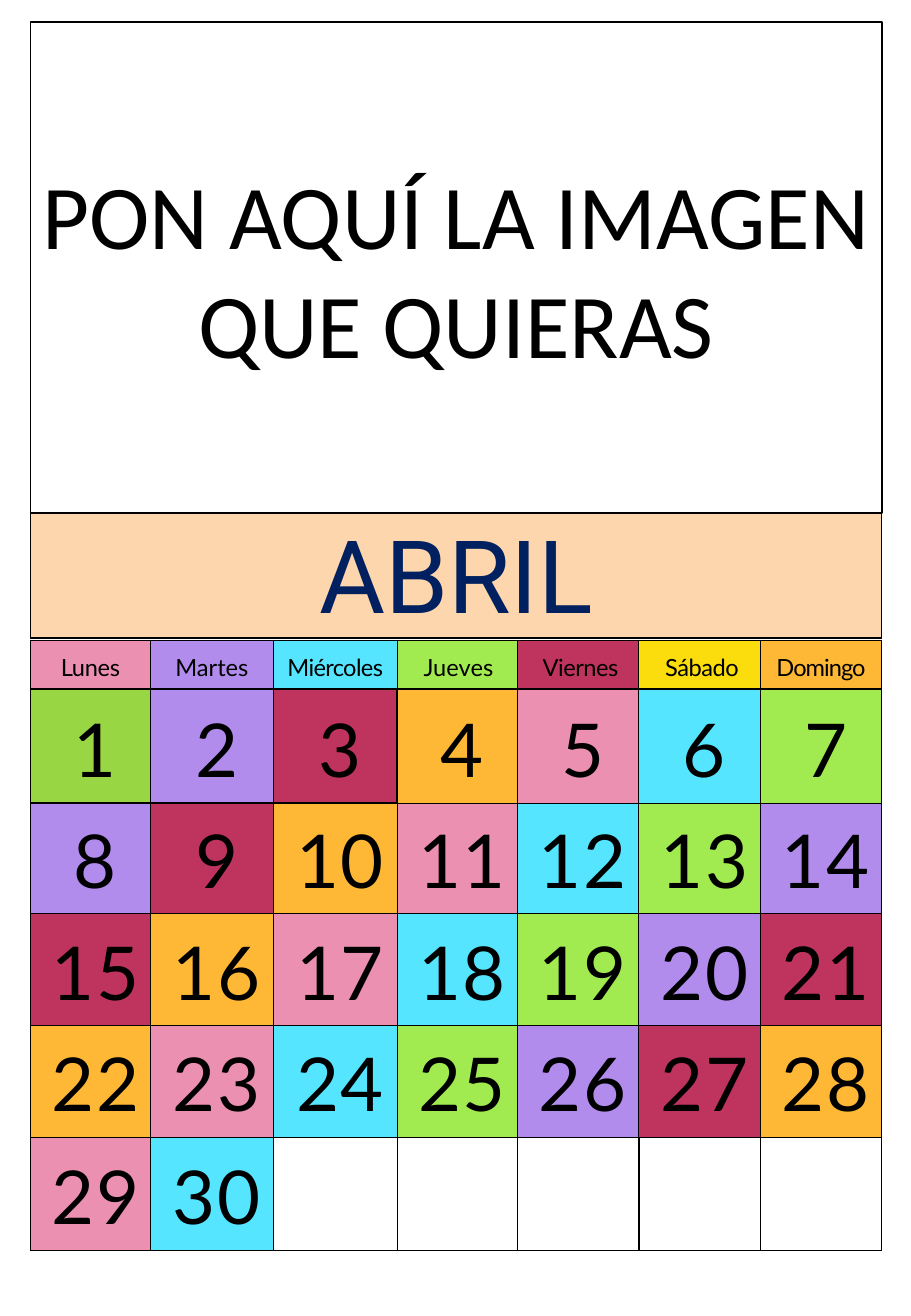
from lxml import etree
from pptx import Presentation
from pptx.dml.color import RGBColor
from pptx.enum.shapes import MSO_SHAPE
from pptx.enum.text import MSO_ANCHOR, PP_ALIGN
from pptx.oxml.ns import qn
from pptx.util import Pt

EMU_PER_PX = 9144
RECTANGLE = MSO_SHAPE.RECTANGLE
MIDDLE = MSO_ANCHOR.MIDDLE
CENTER = PP_ALIGN.CENTER

BLACK = RGBColor(0x00, 0x00, 0x00)
WHITE = RGBColor(0xFF, 0xFF, 0xFF)
NAVY = RGBColor(0x00, 0x20, 0x60)
PEACH = RGBColor(0xFD, 0xD6, 0xAD)
PINK = RGBColor(0xEB, 0x90, 0xB0)
VIOLET = RGBColor(0xB1, 0x8C, 0xEC)
CYAN = RGBColor(0x55, 0xE5, 0xFF)
LIME = RGBColor(0xA1, 0xEB, 0x51)
GREEN = RGBColor(0x99, 0xD6, 0x43)
CRIMSON = RGBColor(0xBE, 0x34, 0x5E)
YELLOW = RGBColor(0xFB, 0xDD, 0x0D)
ORANGE = RGBColor(0xFF, 0xB8, 0x36)

LEFT, WIDTH = 25, 701
COLUMN_WIDTHS = [99, 101, 102, 99, 100, 100, 100]
ROW_HEIGHTS = [40, 94, 91, 92, 92, 93]
ROW_INSETS = [5, 4, 2, 3, 3, 3]
DAY_COLORS = [LIME, VIOLET, CRIMSON, ORANGE, PINK, CYAN]
DAYS_IN_MONTH = 30
WEEKDAYS = [
    ("Lunes", PINK, 0, -20),
    ("Martes", VIOLET, 0, 0),
    ("Miércoles", CYAN, 0, -40),
    ("Jueves", LIME, 2, 0),
    ("Viernes", CRIMSON, 4, -30),
    ("Sábado", YELLOW, 4, -30),
    ("Domingo", ORANGE, 0, -60),
]
THIN, THICK = 0.75, 1
THICK_CELLS = {(1, 0), (1, 1), (1, 2), (5, 5), (5, 6)}
NEIGHBOURS = {"lnL": (0, -1), "lnR": (0, 1), "lnT": (-1, 0), "lnB": (1, 0)}


def px(length):
    return length * EMU_PER_PX


def write_text(frame, text, *, font, size, color=BLACK, before=0, indent=0, spacing=0):
    paragraph = frame.paragraphs[0]
    paragraph.alignment = CENTER
    paragraph.space_before = Pt(before)
    if indent:
        properties = paragraph._p.get_or_add_pPr()
        properties.set("marL", str(px(indent)))
        properties.set("indent", "0")
    run = paragraph.add_run()
    run.text = text
    run.font.name = font
    run.font.size = Pt(size)
    run.font.bold = False
    run.font.color.rgb = color
    if spacing:
        run._r.get_or_add_rPr().set("spc", str(spacing))


def format_cell(cell, fill, inset, borders):
    cell.margin_left = cell.margin_right = cell.margin_bottom = 0
    cell.margin_top = px(inset)
    cell.vertical_anchor = MIDDLE
    cell.fill.solid()
    cell.fill.fore_color.rgb = fill
    properties = cell._tc.get_or_add_tcPr()
    for index, (side, width) in enumerate(borders.items()):
        line = etree.Element(qn(f"a:{side}"), w=str(Pt(width)))
        solid = etree.SubElement(line, qn("a:solidFill"))
        etree.SubElement(solid, qn("a:srgbClr"), val=str(BLACK))
        properties.insert(index, line)


def add_plain_table(slide, top, column_widths, row_heights):
    table = slide.shapes.add_table(
        len(row_heights), len(column_widths), px(LEFT), px(top),
        px(sum(column_widths)), px(sum(row_heights))).table
    table.first_row = table.horz_banding = False
    for column, width in zip(table.columns, column_widths):
        column.width = px(width)
    for row, height in zip(table.rows, row_heights):
        row.height = px(height)
    return table


def add_month(slide):
    cell = add_plain_table(slide, 422, [WIDTH], [103]).cell(0, 0)
    format_cell(cell, PEACH, 5, {"lnL": THIN, "lnR": THIN, "lnT": THIN, "lnB": THICK})
    write_text(cell.text_frame, "ABRIL", font="Roboto", size=60, color=NAVY, before=4.2)


def cell_borders(row, column):
    return {
        side: THICK if {(row, column), (row + down, column + across)} & THICK_CELLS else THIN
        for side, (down, across) in NEIGHBOURS.items()
    }


def day_fill(day):
    if day == 1:
        return GREEN
    if day > DAYS_IN_MONTH:
        return WHITE
    return DAY_COLORS[(day - 1) % len(DAY_COLORS)]


def add_calendar(slide):
    table = add_plain_table(slide, 527, COLUMN_WIDTHS, ROW_HEIGHTS)
    for column, (name, fill, indent, spacing) in enumerate(WEEKDAYS):
        cell = table.cell(0, column)
        format_cell(cell, fill, ROW_INSETS[0], cell_borders(0, column))
        write_text(cell.text_frame, name, font="Lato", size=14, before=4.2,
                   indent=indent, spacing=spacing)
    for week in range(1, len(ROW_HEIGHTS)):
        for column in range(len(WEEKDAYS)):
            day = (week - 1) * len(WEEKDAYS) + column + 1
            cell = table.cell(week, column)
            format_cell(cell, day_fill(day), ROW_INSETS[week], cell_borders(week, column))
            if day <= DAYS_IN_MONTH:
                write_text(cell.text_frame, str(day), font="Lato", size=44, before=4.8,
                           indent=8, spacing=100)


def add_image_area(slide):
    shape = slide.shapes.add_shape(RECTANGLE, px(LEFT), px(18), px(WIDTH), px(404))
    shape.shadow.inherit = False
    shape.fill.solid()
    shape.fill.fore_color.rgb = WHITE
    shape.line.color.rgb = BLACK
    shape.line.width = Pt(THICK)
    shape.text_frame.word_wrap = True
    shape.text_frame.vertical_anchor = MIDDLE
    write_text(shape.text_frame, "PON AQUÍ LA IMAGEN QUE QUIERAS", font="Calibri", size=54)


def main():
    presentation = Presentation()
    presentation.slide_width = px(750)
    presentation.slide_height = px(1083)
    slide = presentation.slides.add_slide(presentation.slide_layouts[6])
    add_month(slide)
    add_calendar(slide)
    add_image_area(slide)
    presentation.save("out.pptx")


if __name__ == "__main__":
    main()
